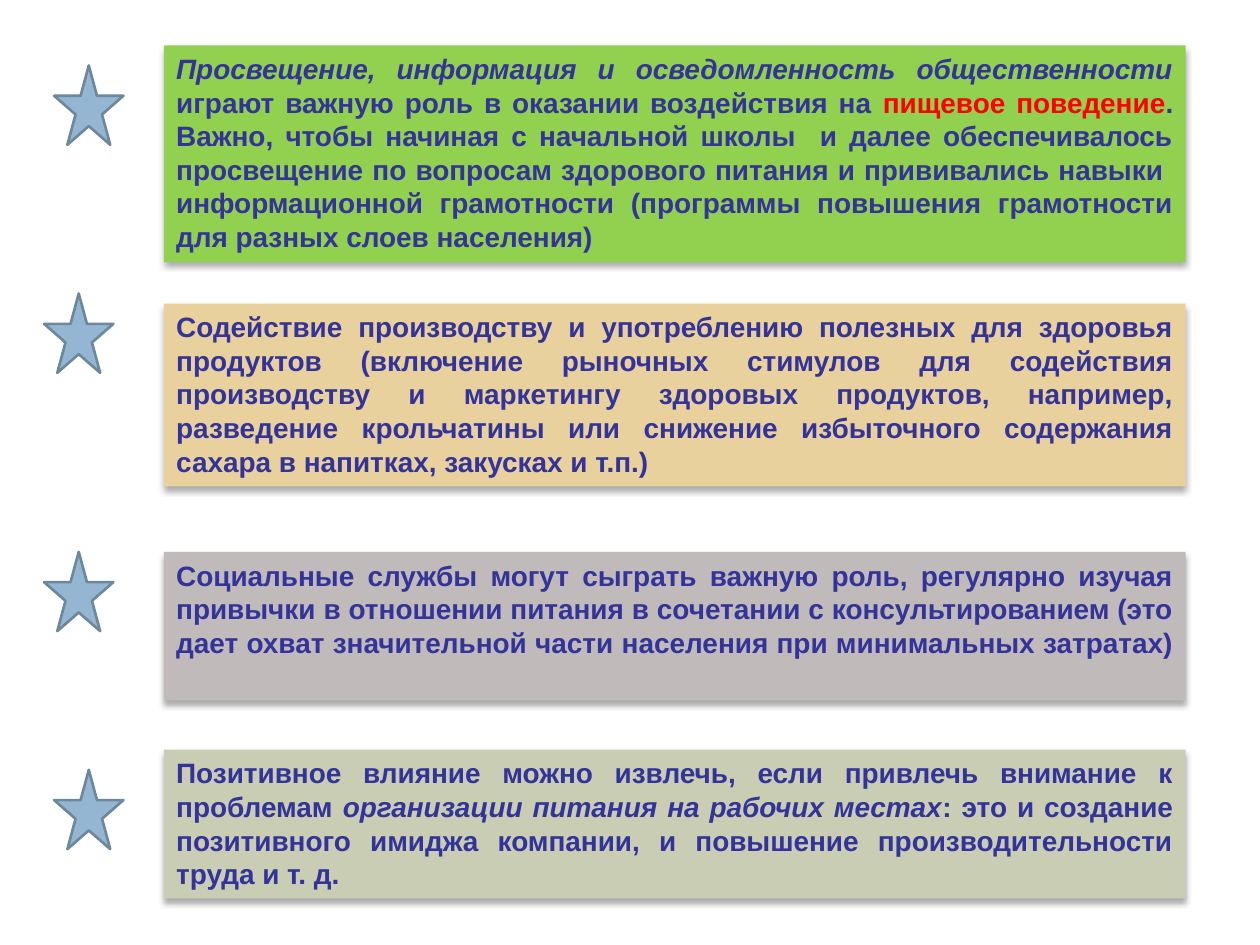
from lxml import etree
from pptx import Presentation
from pptx.dml.color import RGBColor
from pptx.enum.shapes import MSO_SHAPE as SHAPE
from pptx.enum.text import MSO_ANCHOR as ANCHOR, PP_ALIGN as ALIGN
from pptx.oxml import parse_xml
from pptx.oxml.ns import qn
from pptx.util import Inches, Pt

COLORS = {
    "star": "94B6D2", "star_line": "6D879B", "text": "333399", "accent": "FF0000",
    "green": "92D050", "sand": "E8D19D", "grey": "C0BABA", "olive": "C9CDB3",
}
SHADOW = (
    '<a:outerShdw xmlns:a="http://schemas.openxmlformats.org/drawingml/2006/main" '
    'blurRad="44450" dist="27940" dir="5400000" algn="ctr" rotWithShape="0">'
    '<a:srgbClr val="000000"><a:alpha val="32000"/></a:srgbClr></a:outerShdw>'
)
BOX_LEFT, BOX_WIDTH = 1.3, 8.11
STAR_WIDTH, STAR_HEIGHT = 0.55, 0.63
TAB_STEP, TAB_COUNT = 0.49, 8

ROWS = [
    ("green", 0.36, 1.72, 0.43, 0.52, [
        ("Просвещение, информация и осведомленность общественности ", "text", True),
        ("играют важную роль в оказании воздействия на ", "text", False),
        ("пищевое поведение", "accent", False),
        (". Важно, чтобы начиная с начальной школы  и далее обеспечивалось "
         "просвещение по вопросам здорового питания и прививались навыки  "
         "информационной грамотности (программы повышения грамотности "
         "для разных слоев населения)", "text", False),
    ]),
    ("sand", 2.41, 1.45, 0.35, 2.33, [
        ("Содействие производству и употреблению полезных для здоровья "
         "продуктов (включение рыночных стимулов для содействия "
         "производству и маркетингу здоровых продуктов, например, "
         "разведение крольчатины или снижение избыточного содержания "
         "сахара в напитках, закусках и т.п.)", "text", False),
    ]),
    ("grey", 4.38, 1.18, 0.35, 4.38, [
        ("Социальные службы могут сыграть важную роль, регулярно изучая "
         "привычки в отношении питания в сочетании с консультированием (это "
         "дает охват значительной части населения при минимальных затратах) ",
         "text", False),
    ]),
    ("olive", 5.95, 1.18, 0.43, 6.11, [
        ("Позитивное влияние можно извлечь, если привлечь внимание к проблемам ",
         "text", False),
        ("организации питания на рабочих местах", "text", True),
        (": это и создание позитивного имиджа компании, и повышение "
         "производительности труда и т. д.", "text", False),
    ]),
]


def add_filled(shape_type, left, top, width, height, color):
    sp = s.shapes.add_shape(shape_type, *map(Inches, (left, top, width, height)))
    sp.shadow.inherit = False
    sp.fill.solid()
    sp.fill.fore_color.rgb = RGBColor.from_string(COLORS[color])
    return sp


prs = Presentation()
prs.slide_width, prs.slide_height = Inches(10), Inches(7.5)
s = prs.slides.add_slide(prs.slide_layouts[6])

for color, top, height, star_left, star_top, runs in ROWS:
    star = add_filled(SHAPE.STAR_5_POINT, star_left, star_top, STAR_WIDTH, STAR_HEIGHT, "star")
    star.line.color.rgb = RGBColor.from_string(COLORS["star_line"])
    star.line.width = Pt(1.5)

    box = add_filled(SHAPE.RECTANGLE, BOX_LEFT, top, BOX_WIDTH, height, color)
    box.line.fill.background()
    box._element.spPr.find(qn("a:effectLst")).append(parse_xml(SHADOW))

    tf = box.text_frame
    tf.word_wrap = True
    tf.vertical_anchor = ANCHOR.TOP
    p = tf.paragraphs[0]
    p.alignment = ALIGN.JUSTIFY
    tabs = etree.SubElement(p._p.get_or_add_pPr(), qn("a:tabLst"))
    for i in range(TAB_COUNT):
        etree.SubElement(tabs, qn("a:tab"), pos=str(Inches(i * TAB_STEP)), algn="l")
    for text, run_color, italic in runs:
        r = p.add_run()
        r.text = text
        r.font.name = "Arial"
        r.font.size = Pt(16)
        r.font.bold = True
        r.font.italic = italic
        r.font.color.rgb = RGBColor.from_string(COLORS[run_color])

prs.save("out.pptx")
